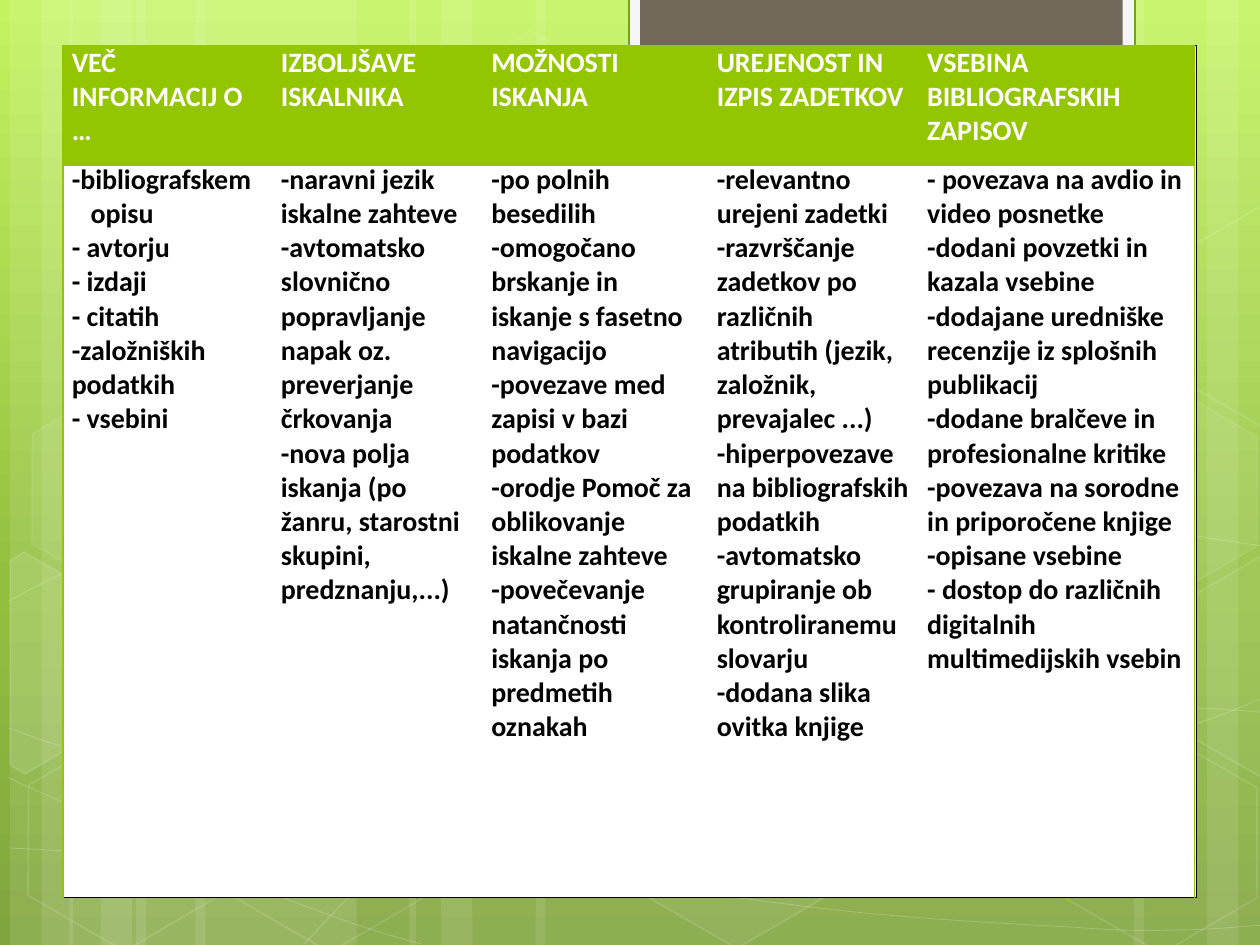
import pptx
import pptx.util
import pptx.dml.color
import pptx.enum.shapes
import pptx.oxml.ns
import copy
import math
from lxml import etree

Inches, Pt = pptx.util.Inches, pptx.util.Pt
RGBColor = pptx.dml.color.RGBColor
KIND = pptx.enum.shapes.MSO_SHAPE
qn = pptx.oxml.ns.qn

WHITE, BLACK = RGBColor(255, 255, 255), RGBColor(0, 0, 0)
LIME, GREEN = RGBColor(0x94, 0xC6, 0x00), RGBColor(0x74, 0xA5, 0x10)
PALE, BROWN = RGBColor(0xF5, 0xF5, 0xF5), RGBColor(0x71, 0x68, 0x5A)
SKY = [(0, RGBColor(0xC3, 0xF3, 0x5F)), (0.62, RGBColor(0x93, 0xBF, 0x3F)),
       (1, RGBColor(0x81, 0xA5, 0x3E))]


def paint(shape, fill=None, line=None, width=1, clear=None, faint=None):
    """Set fill and line; clear and faint are their opacities in percent."""
    shape.shadow.inherit = False
    for part, color, alpha in ((shape.fill, fill, clear),
                               (shape.line.fill, line, faint)):
        if color is None:
            part.background()
            continue
        part.solid()
        part.fore_color.rgb = color
        if alpha:
            host = shape.element.spPr
            if part is not shape.fill:
                host = host.find(qn("a:ln"))
            tint = host.find(qn("a:solidFill"))[0]
            etree.SubElement(tint, qn("a:alpha"), val=str(alpha * 1000))
    if line is not None:
        shape.line.width = Pt(width)


def place(kind, left, top, width, height):
    return slide.shapes.add_shape(kind, Inches(left), Inches(top),
                                  Inches(width), Inches(height))


deck = pptx.Presentation()
deck.slide_width, deck.slide_height = Inches(10), Inches(7.5)
slide = deck.slides.add_slide(deck.slide_layouts[6])

# Background gradient
back = slide.background.fill
back.gradient()
back.gradient_angle = 270
stops = slide.element.find(".//" + qn("a:gsLst"))
stops.append(copy.deepcopy(stops[-1]))
for stop, (spot, color) in zip(back.gradient_stops, SKY):
    stop.position = spot
    stop.color.rgb = color

# Vertical light bands
for left, width in [(1.08, 1.75), (0.08, 0.5), (0.33, 0.83), (1.55, 1.75),
                    (0.55, 0.5), (0.8, 0.83), (7.33, 1.75), (9.58, 0.5),
                    (9, 0.83), (4.25, 3.08), (3.25, 0.5), (3.5, 0.83)]:
    paint(place(KIND.RECTANGLE, left, 0, width, 7.5), WHITE, clear=10)

# Sweeping curves: a start, then pieces of two controls and an end,
# or of an end alone where the piece is straight
curves = [
    [[(0.07, 6.73)], [(0.61, 6.76), (1.15, 6.79), (1.9, 6.78)],
     [(2.65, 6.77), (3.58, 6.75), (4.58, 6.65)],
     [(5.58, 6.55), (7, 6.36), (7.92, 6.17)],
     [(8.83, 5.98), (9.77, 5.68), (10.07, 5.51)]],
    [[(0.07, 4.77)], [(0.36, 4.61), (0.65, 4.46), (1.21, 4.31)],
     [(1.78, 4.16), (2.59, 3.94), (3.47, 3.87)],
     [(4.36, 3.8), (5.44, 3.79), (6.54, 3.87)],
     [(7.64, 3.95), (9.47, 4.26), (10.07, 4.34)]],
    [[(0.06, 6.17)], [(1.27, 6.72), (2.47, 7.27), (3.34, 7.49)]],
    [[(0.07, 5.78)], [(0.38, 5.89), (0.7, 6), (1.28, 6.16)],
     [(1.86, 6.31), (2.73, 6.56), (3.57, 6.73)],
     [(4.4, 6.9), (5.45, 7.08), (6.28, 7.18)],
     [(7.11, 7.29), (8, 7.33), (8.53, 7.36)],
     [(9.05, 7.4), (9.19, 7.38), (9.45, 7.38)],
     [(9.71, 7.37), (9.89, 7.35), (10.07, 7.34)]],
    [[(2.42, 7.49)], [(2.6, 7.29), (2.78, 7.09), (3.02, 6.91)],
     [(3.26, 6.73), (3.6, 6.53), (3.88, 6.39)],
     [(4.16, 6.25), (4.33, 6.19), (4.7, 6.09)],
     [(5.06, 5.99), (5.73, 5.85), (6.08, 5.78)],
     [(6.44, 5.71), (6.49, 5.71), (6.8, 5.69)],
     [(7.11, 5.66), (7.6, 5.63), (7.94, 5.62)],
     [(8.29, 5.61), (8.86, 5.62), (8.86, 5.62)], [(9.53, 5.62)],
     [(9.71, 5.63), (9.88, 5.64), (9.97, 5.65)],
     [(10.06, 5.66), (10.03, 5.65), (10.06, 5.66)]],
]
for curve in curves:
    ends = [(Inches(x), Inches(y)) for *_, (x, y) in curve]
    pen = slide.shapes.build_freeform(*ends[0])
    pen.add_line_segments(ends[1:], close=False)
    sweep = pen.convert_to_shape()
    paint(sweep, None, WHITE, 0.5, faint=20)
    # Bend each straight piece by its controls
    for piece, bend in zip(sweep.element.findall(".//" + qn("a:lnTo")), curve[1:]):
        if len(bend) == 3:
            piece.tag = qn("a:cubicBezTo")
            for n, (x, y) in enumerate(bend[:2]):
                dot = etree.Element(qn("a:pt"), x=str(Inches(x) - sweep.left),
                                    y=str(Inches(y) - sweep.top))
                piece.insert(n, dot)

# Whole hexagons
for left, top, clear, faint in [
        (3.34, 0.36, 4, 8), (4.97, 5.89, 6, 12), (0.11, 5.91, None, 12),
        (0.14, 3.12, 7, 8), (1.74, 5.92, None, 12), (7.53, 4.53, 10, 12),
        (8.34, 5.93, None, 12), (8.34, 3.14, 7, 8)]:
    hexa = place(KIND.HEXAGON, left, top, 1.75, 1.52)
    hexa.adjustments[0] = 0.285
    hexa.rotation = 30
    paint(hexa, WHITE if clear else None, WHITE, 1, clear, faint)

# Hexagons cut off by the slide edges, turned by 30 degrees about a centre
cos, sin = math.cos(math.radians(30)), math.sin(math.radians(30))
for midx, midy, clear, dots in [
        (0.36, 5.35, 10, [(0.08, 4.45), (0.19, 4.38), (0.96, 4.82),
                          (0.95, 5.7), (0.2, 6.14), (0.08, 6.07)]),
        (9.85, 5.2, 4, [(9.26, 4.85), (10.01, 4.41), (10.09, 4.46),
                        (10.09, 6.13), (10.02, 6.17), (9.26, 5.73)]),
        (9.85, 2.41, None, [(9.26, 2.07), (10.01, 1.63), (10.1, 1.68),
                            (10.09, 3.35), (10.02, 3.39), (9.26, 2.95)])]:
    flat = [(Inches(midx + (x - midx) * cos + (y - midy) * sin),
             Inches(midy - (x - midx) * sin + (y - midy) * cos))
            for x, y in dots]
    pen = slide.shapes.build_freeform(*flat[0])
    pen.add_line_segments(flat[1:], close=True)
    hexa = pen.convert_to_shape()
    hexa.rotation = 30
    paint(hexa, WHITE if clear else None, WHITE, 1, clear, 12)

# White panel and the tab at the top
paint(place(KIND.RECTANGLE, 0.5, 0.36, 9, 6.76), WHITE, BLACK, 0.5)
paint(place(KIND.RECTANGLE, 4.99, -0.02, 4.02, 0.76), PALE, GREEN, 1.25)
paint(place(KIND.RECTANGLE, 5.08, -0.02, 3.83, 0.68), BROWN)

# Table: width, heading and entries of each column
columns = [
    (1.66, ["VEČ INFORMACIJ O …"],
     ["-bibliografskem opisu", "- avtorju", "- izdaji", "- citatih",
      "-založniških podatkih", "- vsebini"]),
    (1.67, ["IZBOLJŠAVE ISKALNIKA"],
     ["-naravni jezik iskalne zahteve",
      "-avtomatsko slovnično popravljanje napak oz. preverjanje črkovanja",
      "-nova polja iskanja (po žanru, starostni skupini, predznanju,...)"]),
    (1.79, ["MOŽNOSTI ISKANJA"],
     ["-po polnih besedilih",
      "-omogočano brskanje in iskanje s fasetno navigacijo",
      "-povezave med zapisi v bazi podatkov",
      "-orodje Pomoč za oblikovanje iskalne zahteve",
      "-povečevanje natančnosti iskanja po predmetih oznakah"]),
    (1.67, ["UREJENOST IN IZPIS ZADETKOV"],
     ["-relevantno urejeni zadetki",
      "-razvrščanje zadetkov po različnih atributih (jezik, založnik, prevajalec ...)",
      "-hiperpovezave na bibliografskih podatkih",
      "-avtomatsko grupiranje ob kontroliranemu slovarju",
      "-dodana slika ovitka knjige"]),
    (2.19, ["VSEBINA", "BIBLIOGRAFSKIH ZAPISOV"],
     ["- povezava na avdio in video posnetke",
      "-dodani povzetki in kazala vsebine",
      "-dodajane uredniške recenzije iz splošnih publikacij",
      "-dodane bralčeve in profesionalne kritike",
      "-povezava na sorodne in priporočene knjige",
      "-opisane vsebine",
      "- dostop do različnih digitalnih multimedijskih vsebin"]),
]
last = len(columns) - 1
table = slide.shapes.add_table(2, len(columns), Inches(0.5), Inches(0.36),
                               Inches(8.98), Inches(6.77)).table
table.first_row = table.horz_banding = False
table.rows[0].height, table.rows[1].height = Inches(0.93), Inches(5.84)
for c, (width, *texts) in enumerate(columns):
    table.columns[c].width = Inches(width)
    for r, lines in enumerate(texts):
        cell = table.cell(r, c)
        cell.margin_left = cell.margin_right = Inches(0.07)
        cell.margin_top = cell.margin_bottom = 0
        # Green outer edges, and a thick rule under the heading
        edges = {"a:lnL": 0.75 if r == 0 or c == 0 else 0,
                 "a:lnR": 0.75 if r == 0 or c == last else 0,
                 "a:lnT": 4 if r else 0.75, "a:lnB": 0 if r else 4}
        props = cell._tc.get_or_add_tcPr()
        for tag, size in edges.items():
            edge = etree.SubElement(props, qn(tag), w=str(Pt(size)))
            if size:
                ink = etree.SubElement(edge, qn("a:solidFill"))
                etree.SubElement(ink, qn("a:srgbClr"), val=str(LIME))
            else:
                etree.SubElement(edge, qn("a:noFill"))
        if r:
            cell.fill.background()
        else:
            cell.fill.solid()
            cell.fill.fore_color.rgb = LIME
        frame = cell.text_frame
        for n, text in enumerate(lines):
            para = frame.add_paragraph() if n else frame.paragraphs[0]
            run = para.add_run()
            run.text = text
            run.font.name, run.font.size, run.font.bold = "Calibri", Pt(16), True
            run.font.color.rgb = BLACK if r else WHITE

# Hanging indent for the first entry
hang = table.cell(1, 0).text_frame.paragraphs[0]._p.get_or_add_pPr()
hang.set("marL", str(Inches(0.15)))
hang.set("indent", str(-Inches(0.15)))

deck.save("out.pptx")
